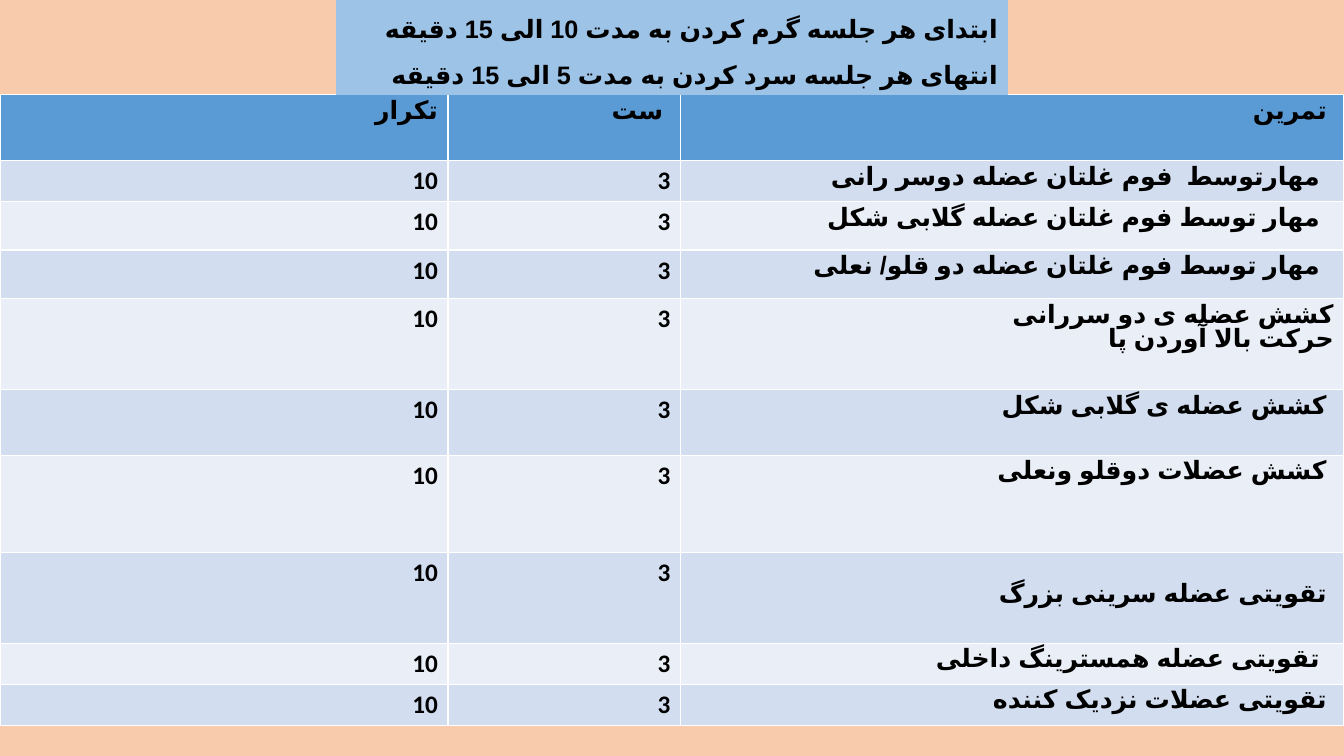
from lxml import etree
from pptx import Presentation
from pptx.dml.color import RGBColor
from pptx.enum.lang import MSO_LANGUAGE_ID
from pptx.enum.shapes import MSO_SHAPE
from pptx.enum.text import MSO_ANCHOR, PP_ALIGN
from pptx.oxml.ns import qn
from pptx.util import Pt

RECT = MSO_SHAPE.RECTANGLE
MIDDLE = MSO_ANCHOR.MIDDLE
RIGHT, JUSTIFY = PP_ALIGN.RIGHT, PP_ALIGN.JUSTIFY
PERSIAN = MSO_LANGUAGE_ID.FARSI

BACKGROUND, BANNER, HEADER = "F8CBAD", "9DC3E6", "5B9BD5"
BANDS = ("D2DEEF", "EAEFF7")
ARABIC_FONT = "Arial"
INSET = 7.2
COLUMN_WIDTHS = (320, 166, 474)

BANNER_LINES = (
    "ابتدای هر جلسه گرم کردن به مدت 10 الی 15 دقیقه",
    "انتهای هر جلسه سرد کردن به مدت 5 الی 15 دقیقه",
)

# Header cells: text, extra right indent
HEADINGS = (("تکرار", 0), ("ست", 5), ("تمرین", 5))
HEADER_HEIGHT = 47

# Exercises: name, row height, extra right indent, extra top margin
EXERCISES = (
    ("مهارتوسط  فوم غلتان عضله دوسر رانی", 29.3, 10, 0),
    ("مهار توسط فوم غلتان عضله گلابی شکل", 34.6, 10, 0),
    ("مهار توسط فوم غلتان عضله دو قلو/ نعلی", 34.6, 10, 0),
    ("کشش عضله ی دو سررانی\nحرکت بالا آوردن پا", 65, 0, 0),
    ("کشش عضله ی گلابی شکل", 47, 5, 0),
    ("کشش عضلات دوقلو ونعلی", 69.3, 5, 0),
    ("تقویتی عضله سرینی بزرگ", 65, 5, 18),
    ("تقویتی عضله همسترینگ داخلی", 29.3, 10, 0),
    ("تقویتی عضلات نزدیک کننده", 29.3, 5, 0),
)
REPEATS, SETS = "10", "3"


def color(value):
    return RGBColor.from_string(value)


def paint(target, value):
    target.fill.solid()
    target.fill.fore_color.rgb = color(value)


def format_text(tf, align, spacing, font):
    for p in tf.paragraphs:
        p.alignment = align
        p.line_spacing = spacing
        for r in p.runs:
            r.font.size = Pt(18)
            r.font.bold = True
            r.font.name = font
            r.font.language_id = PERSIAN
            r.font.color.rgb = color("000000")
            # Arabic script takes its font from the complex-script slot
            cs = etree.SubElement(r.font._element, qn("a:cs"))
            cs.set("typeface", ARABIC_FONT)


def fill_cell(cell, text, fill, font="Lato", spacing=0.87, indent=0, drop=0):
    paint(cell, fill)
    cell.margin_right = Pt(INSET + indent)
    cell.margin_top = Pt(3.6 + drop)
    cell.text_frame.text = text
    format_text(cell.text_frame, RIGHT, spacing, font)


def add_banner(slide, x, y, w, h):
    sp = slide.shapes.add_shape(RECT, Pt(x), Pt(y), Pt(w), Pt(h))
    sp.shadow.inherit = False
    paint(sp, BANNER)
    sp.line.fill.background()
    tf = sp.text_frame
    tf.word_wrap = True
    tf.vertical_anchor = MIDDLE
    tf.text = "\n".join(BANNER_LINES)
    format_text(tf, JUSTIFY, 1.5, "Lato")
    for p in tf.paragraphs:
        p._p.get_or_add_pPr().set("rtl", "1")


def add_exercise_table(slide, x, y, w):
    heights = [HEADER_HEIGHT] + [exercise[1] for exercise in EXERCISES]
    frame = slide.shapes.add_table(len(heights), len(COLUMN_WIDTHS),
                                   Pt(x), Pt(y), Pt(w), Pt(sum(heights)))
    table = frame.table
    for column, width in zip(table.columns, COLUMN_WIDTHS):
        column.width = Pt(width)
    for row, height in zip(table.rows, heights):
        row.height = Pt(height)

    # Header row
    for i, (text, indent) in enumerate(HEADINGS):
        fill_cell(table.cell(0, i), text, HEADER, indent=indent)

    # Exercise rows
    for i, (name, _, indent, drop) in enumerate(EXERCISES):
        band = BANDS[i % 2]
        for j, number in enumerate((REPEATS, SETS)):
            fill_cell(table.cell(i + 1, j), number, band, "Calibri", 1.0)
        fill_cell(table.cell(i + 1, 2), name, band, indent=indent, drop=drop)


def main():
    prs = Presentation()
    prs.slide_width, prs.slide_height = Pt(960), Pt(540)
    s = prs.slides.add_slide(prs.slide_layouts[6])
    paint(s.background, BACKGROUND)
    add_exercise_table(s, 0, 67.7, 960)
    add_banner(s, 240, -5, 480, 72.7)
    prs.save("out.pptx")


if __name__ == "__main__":
    main()
